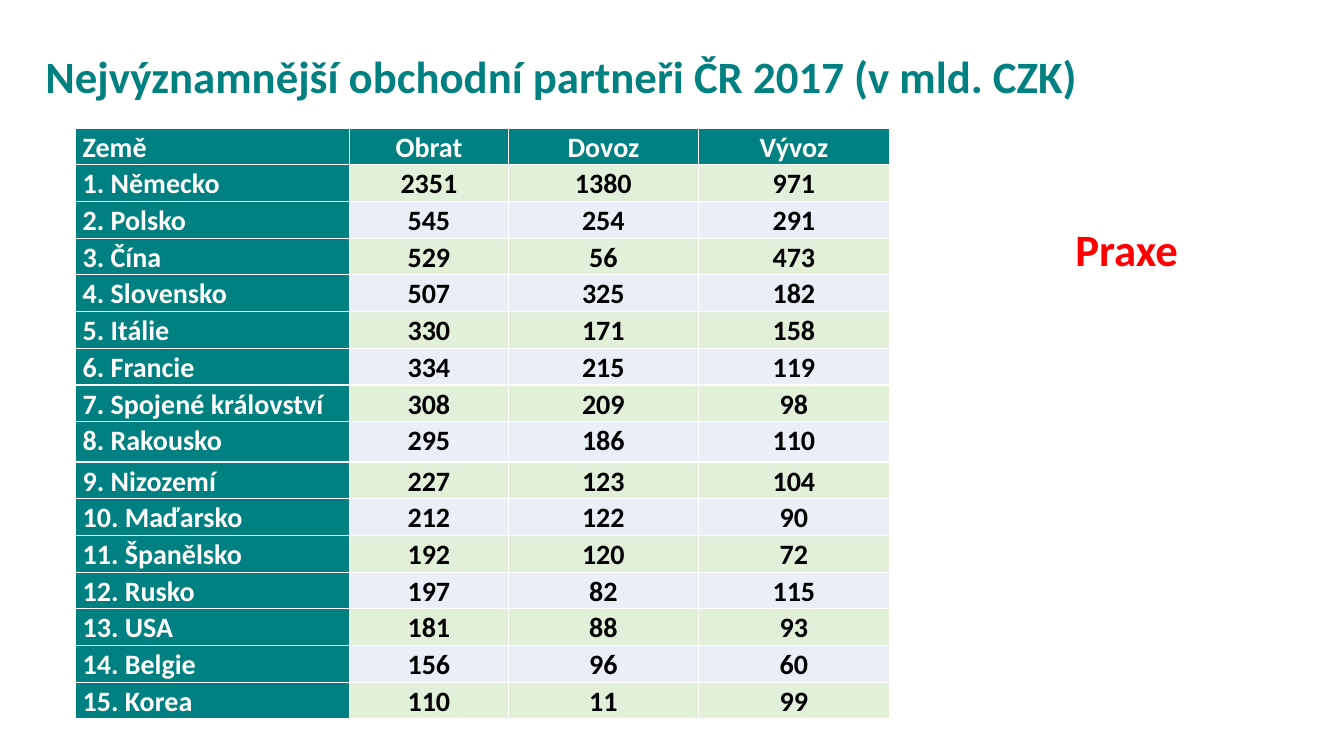
import pptx
import pptx.dml.color
import pptx.enum.text
import pptx.util

Inches = pptx.util.Inches
ALIGN = pptx.enum.text.PP_ALIGN
ANCHOR = pptx.enum.text.MSO_ANCHOR
AUTO_SIZE = pptx.enum.text.MSO_AUTO_SIZE

TEAL, WHITE, BLACK, RED = "008080", "FFFFFF", "000000", "FF0000"
BANDS = ("E2F0D9", "EAEFF7")
HEADER = ("Země", "Obrat", "Dovoz", "Vývoz")
PARTNERS = (
    ("Německo", 2351, 1380, 971),
    ("Polsko", 545, 254, 291),
    ("Čína", 529, 56, 473),
    ("Slovensko", 507, 325, 182),
    ("Itálie", 330, 171, 158),
    ("Francie", 334, 215, 119),
    ("Spojené království", 308, 209, 98),
    ("Rakousko", 295, 186, 110),
    ("Nizozemí", 227, 123, 104),
    ("Maďarsko", 212, 122, 90),
    ("Španělsko", 192, 120, 72),
    ("Rusko", 197, 82, 115),
    ("USA", 181, 88, 93),
    ("Belgie", 156, 96, 60),
    ("Korea", 110, 11, 99),
)
COLUMN_WIDTHS = (2.72, 1.57, 1.89, 1.89)
ROW_HEIGHT = 0.36
TALL_ROW, TALL_HEIGHT = 8, 0.4


def rgb(color):
    return pptx.dml.color.RGBColor.from_string(color)


def write(tf, text, size, color, align, spacing=1.0):
    p = tf.paragraphs[0]
    p.text = text
    p.alignment = align
    p.line_spacing = spacing
    p.font.name = "Calibri"
    p.font.size = pptx.util.Pt(size)
    p.font.bold = True
    p.font.color.rgb = rgb(color)


def add_title(s, text, left, top, width, height):
    sp = s.shapes.title
    sp.left, sp.top = Inches(left), Inches(top)
    sp.width, sp.height = Inches(width), Inches(height)
    tf = sp.text_frame
    tf.auto_size = AUTO_SIZE.NONE
    tf.vertical_anchor = ANCHOR.MIDDLE
    write(tf, text, 32, TEAL, ALIGN.LEFT, 0.9)


def fill_cell(cell, text, fill, color, align):
    cell.margin_left = cell.margin_right = Inches(0.07)
    cell.margin_top = cell.margin_bottom = 0
    cell.fill.solid()
    cell.fill.fore_color.rgb = rgb(fill)
    write(cell.text_frame, text, 20, color, align, 1.07)


def add_partner_table(s, left, top, width, height):
    rows = [HEADER]
    for rank, (country, *values) in enumerate(PARTNERS, 1):
        rows.append((f"{rank}. {country}", *values))
    table = s.shapes.add_table(
        len(rows), len(HEADER),
        Inches(left), Inches(top), Inches(width), Inches(height)).table
    table.first_col = True
    for column, column_width in zip(table.columns, COLUMN_WIDTHS):
        column.width = Inches(column_width)
    for i, row in enumerate(rows):
        table.rows[i].height = Inches(TALL_HEIGHT if i == TALL_ROW else ROW_HEIGHT)
        for j, value in enumerate(row):
            heading = i == 0 or j == 0
            fill_cell(
                table.cell(i, j), str(value),
                TEAL if heading else BANDS[(i - 1) % 2],
                WHITE if heading else BLACK,
                ALIGN.LEFT if j == 0 else ALIGN.CENTER)


def add_label(s, text, left, top, width, height):
    sp = s.shapes.add_textbox(
        Inches(left), Inches(top), Inches(width), Inches(height))
    tf = sp.text_frame
    tf.word_wrap = True
    tf.auto_size = AUTO_SIZE.SHAPE_TO_FIT_TEXT
    write(tf, text, 32, RED, ALIGN.CENTER)


def main():
    prs = pptx.Presentation()
    prs.slide_width, prs.slide_height = Inches(13.33), Inches(7.5)
    s = prs.slides.add_slide(prs.slide_layouts[5])
    add_title(s, "Nejvýznamnější obchodní partneři ČR 2017 (v mld. CZK)",
              0.35, 0.06, 10.7, 1.45)
    add_partner_table(s, 0.75, 1.27, sum(COLUMN_WIDTHS),
                      ROW_HEIGHT * len(PARTNERS) + TALL_HEIGHT)
    add_label(s, "Praxe", 10.16, 2.15, 2.03, 0.64)
    prs.save("out.pptx")


if __name__ == "__main__":
    main()
